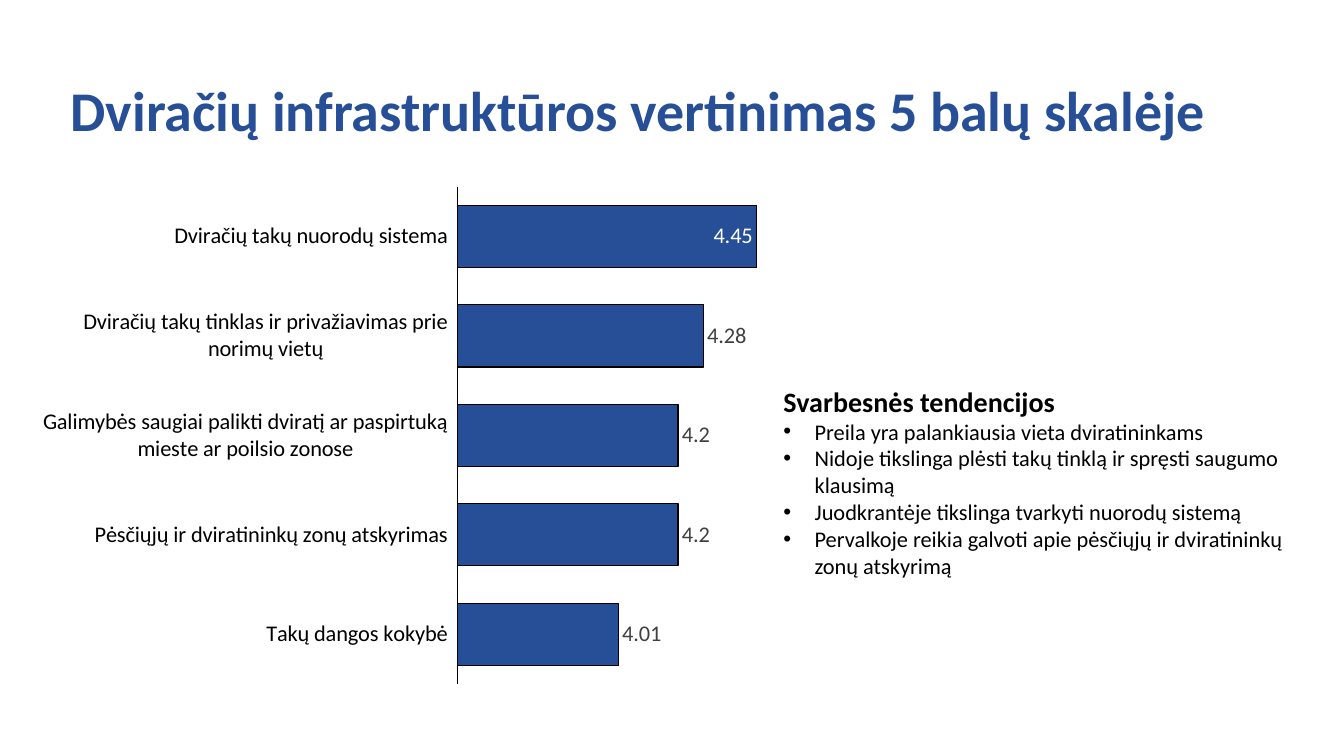
from dataclasses import dataclass

from lxml import etree
from pptx import Presentation
from pptx.chart.data import CategoryChartData
from pptx.dml.color import RGBColor
from pptx.enum.chart import XL_CHART_TYPE, XL_LABEL_POSITION, XL_TICK_LABEL_POSITION, XL_TICK_MARK
from pptx.enum.text import MSO_ANCHOR, MSO_AUTO_SIZE, PP_ALIGN
from pptx.oxml.ns import qn
from pptx.util import Inches, Pt

BAR_CLUSTERED = XL_CHART_TYPE.BAR_CLUSTERED
OUTSIDE_END = XL_LABEL_POSITION.OUTSIDE_END
INSIDE_END = XL_LABEL_POSITION.INSIDE_END
LABELS_LOW = XL_TICK_LABEL_POSITION.LOW
NO_TICKS = XL_TICK_MARK.NONE
MIDDLE, TOP = MSO_ANCHOR.MIDDLE, MSO_ANCHOR.TOP
NO_AUTOFIT = MSO_AUTO_SIZE.NONE
LEFT = PP_ALIGN.LEFT
TITLE_AND_CONTENT = 1


@dataclass(frozen=True)
class Theme:
    font: str = "Calibri"
    blue: str = "264F97"
    black: str = "000000"
    grey: str = "404040"
    white: str = "FFFFFF"
    title_size: int = 40
    heading_size: int = 20
    text_size: int = 16
    chart_size: int = 10
    line_width: float = 0.75


TITLE = "Dviračių infrastruktūros vertinimas 5 balų skalėje"
HEADING = "Svarbesnės tendencijos"
TRENDS = [
    "Preila yra palankiausia vieta dviratininkams",
    "Nidoje tikslinga plėsti takų tinklą ir spręsti saugumo klausimą",
    "Juodkrantėje tikslinga tvarkyti nuorodų sistemą",
    "Pervalkoje reikia galvoti apie pėsčiųjų ir dviratininkų zonų atskyrimą",
]
RATINGS = {
    "Dviračių takų nuorodų sistema": 4.45,
    "Dviračių takų tinklas ir privažiavimas prie norimų vietų": 4.28,
    "Galimybės saugiai palikti dviratį ar paspirtuką mieste ar poilsio zonose": 4.2,
    "Pėsčiųjų ir dviratininkų zonų atskyrimas": 4.2,
    "Takų dangos kokybė": 4.01,
}


def format_font(font, theme, size, color, bold=False):
    font.name = theme.font
    font.size = Pt(size)
    font.bold = bold
    font.color.rgb = RGBColor.from_string(color)


def write_text(para, text, theme, line_spacing=1.0, **font_format):
    para.alignment = LEFT
    para.line_spacing = line_spacing
    para.space_before = para.space_after = Pt(0)
    span = para.add_run()
    span.text = text
    format_font(span.font, theme, **font_format)


def set_bullet(para, symbol=None, indent=0):
    """Give the paragraph a hanging bullet, or none when no symbol is given."""
    properties = para._p.get_or_add_pPr()
    properties.set("marL", str(Inches(indent)))
    properties.set("indent", str(Inches(-indent)))
    if symbol:
        etree.SubElement(properties, qn("a:buFont")).set("typeface", "Arial")
        etree.SubElement(properties, qn("a:buChar")).set("char", symbol)
    else:
        etree.SubElement(properties, qn("a:buNone"))


def set_plot_layout(chart, **fractions):
    """Fix the inner plot area as fractions of the chart's size."""
    plot_area = chart._chartSpace.chart.plotArea
    for old_layout in plot_area.findall(qn("c:layout")):
        plot_area.remove(old_layout)
    layout = etree.Element(qn("c:layout"))
    plot_area.insert(0, layout)
    manual = etree.SubElement(layout, qn("c:manualLayout"))
    settings = {"layoutTarget": "inner", "xMode": "edge", "yMode": "edge", **fractions}
    for name, value in settings.items():
        etree.SubElement(manual, qn(f"c:{name}")).set("val", str(value))


class SlideBuilder:
    def __init__(self, slide, theme):
        self.slide = slide
        self.theme = theme

    def place(self, box, bounds, anchor):
        box.left, box.top, box.width, box.height = map(Inches, bounds)
        frame = box.text_frame
        frame.word_wrap = True
        frame.auto_size = NO_AUTOFIT
        frame.vertical_anchor = anchor
        return frame

    def title(self, text, bounds):
        frame = self.place(self.slide.shapes.title, bounds, MIDDLE)
        write_text(frame.paragraphs[0], text, self.theme, line_spacing=0.9,
                   size=self.theme.title_size, color=self.theme.blue, bold=True)

    def bullet_list(self, heading, items, bounds):
        theme = self.theme
        frame = self.place(self.slide.placeholders[1], bounds, TOP)
        para = frame.paragraphs[0]
        write_text(para, heading, theme, size=theme.heading_size, color=theme.black, bold=True)
        set_bullet(para)
        for item in items:
            para = frame.add_paragraph()
            write_text(para, item, theme, size=theme.text_size, color=theme.black)
            set_bullet(para, "•", 0.31)

    def outline(self, line):
        line.color.rgb = RGBColor.from_string(self.theme.black)
        line.width = Pt(self.theme.line_width)

    def bar_chart(self, ratings, bounds):
        theme = self.theme
        data = CategoryChartData()
        data.categories = list(ratings)
        data.add_series("Series 1", list(ratings.values()))
        chart = self.slide.shapes.add_chart(BAR_CLUSTERED, *map(Inches, bounds), data).chart
        chart.has_legend = chart.has_title = False
        format_font(chart.font, theme, theme.chart_size, theme.black)
        set_plot_layout(chart, x=0.56, y=0.02, w=0.42, h=0.96)

        category_axis = chart.category_axis
        category_axis.reverse_order = True
        category_axis.major_tick_mark = category_axis.minor_tick_mark = NO_TICKS
        category_axis.tick_label_position = LABELS_LOW
        format_font(category_axis.tick_labels.font, theme, theme.text_size, theme.black)
        self.outline(category_axis.format.line)

        value_axis = chart.value_axis
        value_axis.minimum_scale, value_axis.maximum_scale = 3.5, 4.5
        value_axis.has_major_gridlines = False
        value_axis.visible = False

        plot = chart.plots[0]
        plot.gap_width = 60
        plot.vary_by_categories = False
        series = plot.series[0]
        series.format.fill.solid()
        series.format.fill.fore_color.rgb = RGBColor.from_string(theme.blue)
        self.outline(series.format.line)

        labels = series.data_labels
        labels.show_value = True
        labels.position = OUTSIDE_END
        format_font(labels.font, theme, theme.text_size, theme.grey)
        top_label = series.points[0].data_label
        format_font(top_label.font, theme, theme.text_size, theme.white)
        top_label.position = INSIDE_END


def main():
    deck = Presentation()
    deck.slide_width, deck.slide_height = Inches(13.33), Inches(7.5)
    page = SlideBuilder(deck.slides.add_slide(deck.slide_layouts[TITLE_AND_CONTENT]), Theme())
    page.title(TITLE, (0.6, 0.4, 12.26, 1.45))
    page.bullet_list(HEADING, TRENDS, (7.67, 3.76, 5.33, 2.66))
    page.bar_chart(RATINGS, (0.38, 1.75, 7.43, 5.14))
    deck.save("out.pptx")


if __name__ == "__main__":
    main()
